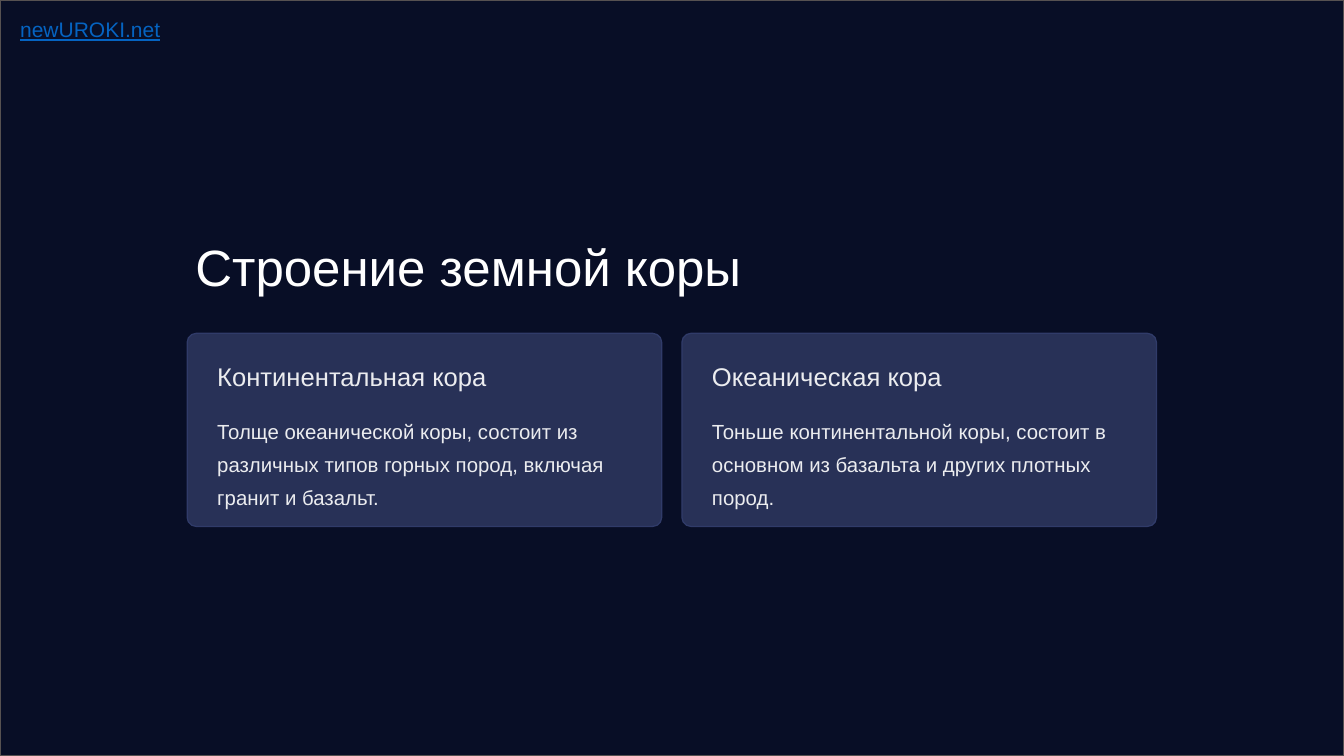
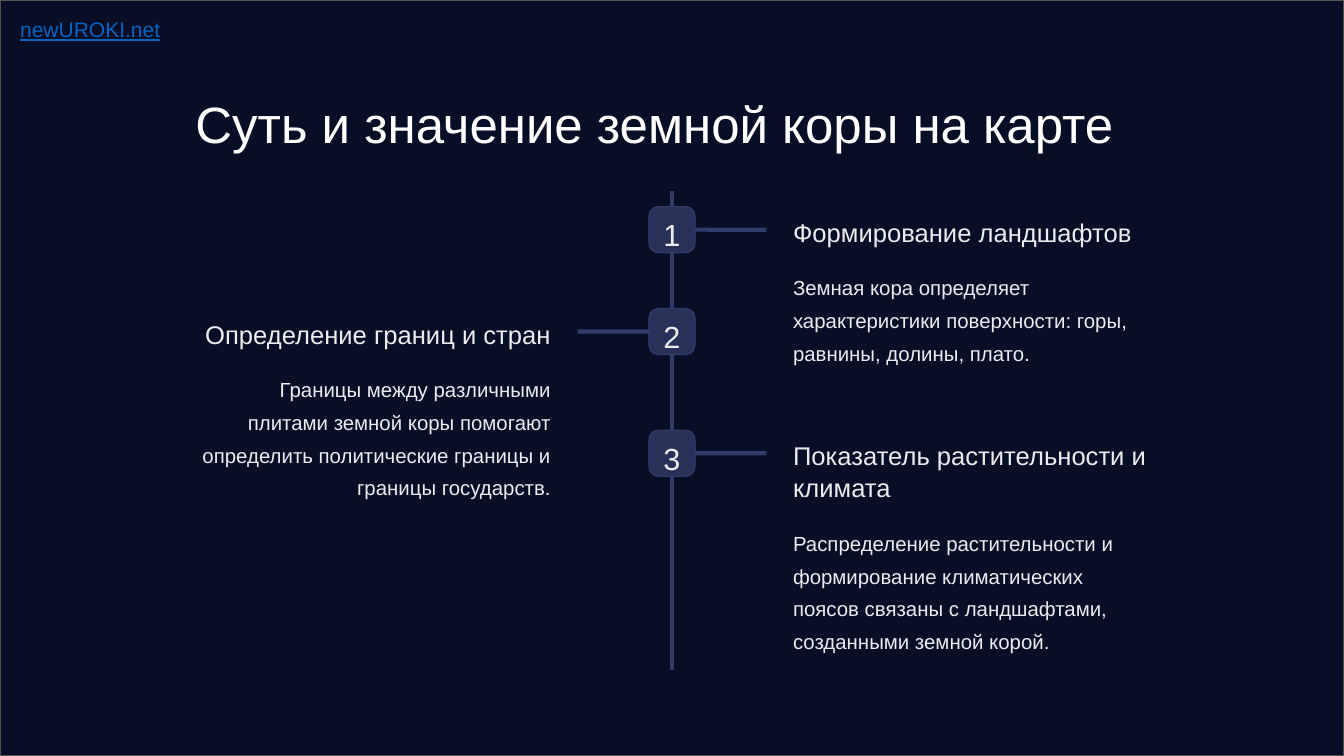
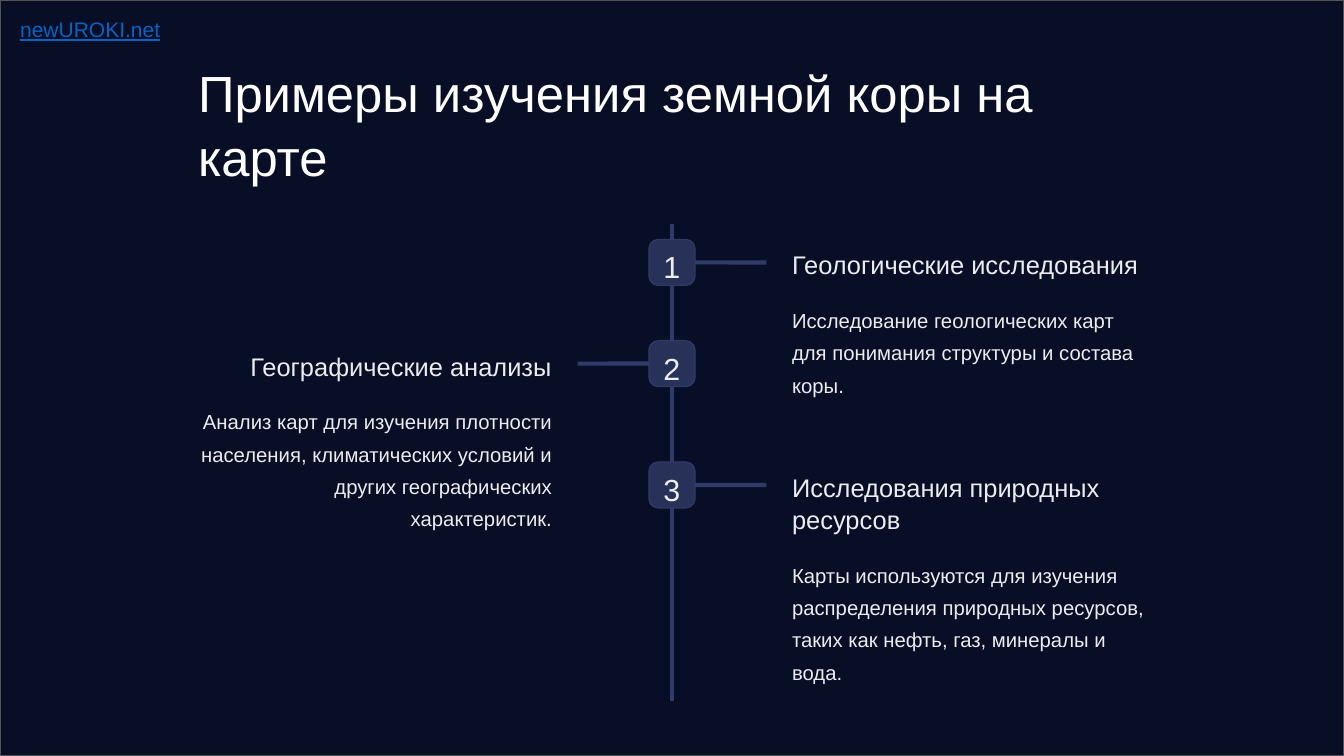
from lxml import etree
from pptx import Presentation
from pptx.dml.color import RGBColor
from pptx.enum.shapes import MSO_CONNECTOR, MSO_SHAPE
from pptx.enum.text import MSO_ANCHOR, PP_ALIGN
from pptx.oxml.ns import qn
from pptx.util import Cm, Pt

RECT, ROUNDED = MSO_SHAPE.RECTANGLE, MSO_SHAPE.ROUNDED_RECTANGLE
STRAIGHT = MSO_CONNECTOR.STRAIGHT
LEFT, CENTER, RIGHT = PP_ALIGN.LEFT, PP_ALIGN.CENTER, PP_ALIGN.RIGHT
TOP = MSO_ANCHOR.TOP
SIDE_LEFT, SIDE_RIGHT = 1, 3

WIDTH, HEIGHT = 40.64, 22.86
FONT = "Arial"
COLORS = {
    "background": "080E26", "frame": "565151", "panel": "283157",
    "line": "303B69", "title": "FFFFFF", "text": "EBECEF", "link": "0563C1",
}
# Role: size in points, line height as a multiple of the size, colour
STYLES = {
    "title": (43.7, 1.25, "title"),
    "heading": (21.9, 1.25, "text"),
    "body": (17.5, 1.6, "text"),
    "number": (26.2, 1.25, "text"),
    "link": (18, None, "link"),
}
TITLE_LINE, HEADING_LINE, BODY_LINE = 1.93, 0.97, 0.98
HEADING_GAP = 0.6


def rgb(name):
    return RGBColor.from_string(COLORS[name])


class Deck:
    """Shared style, the presentation and its current slide."""

    def __init__(self):
        self.prs = Presentation()
        self.prs.slide_width, self.prs.slide_height = Cm(WIDTH), Cm(HEIGHT)

    def new_slide(self, title, top, left=5.66, lines=1, scale=1):
        """Start a slide; scale shrinks its text, left is its side margin."""
        self.slide = self.prs.slides.add_slide(self.prs.slide_layouts[6])
        self.left, self.scale = left, scale
        self.shape(RECT, 0, 0, WIDTH, HEIGHT, "background", "frame")
        self.text("newUROKI.net", "link", 0.36, 0.38, 5.5, 1.02)
        self.text(title, "title", left, top, WIDTH - 2 * left, lines * TITLE_LINE)

    def shape(self, kind, x, y, w, h, fill, line, radius=None):
        sp = self.slide.shapes.add_shape(kind, Cm(x), Cm(y), Cm(w), Cm(h))
        sp.shadow.inherit = False
        sp.fill.solid()
        sp.fill.fore_color.rgb = rgb(fill)
        sp.line.color.rgb = rgb(line)
        sp.line.width = Pt(1.09)
        if radius is not None:
            sp.adjustments[0] = radius
        return sp

    def set_text(self, tf, text, role, align=LEFT):
        size, spacing, color = STYLES[role]
        if role != "link":
            size = round(size * self.scale, 1)
        tf.text = text
        tf.vertical_anchor = TOP
        p = tf.paragraphs[0]
        p.alignment = align
        if spacing:
            p.line_spacing = Pt(round(size * spacing, 1))
        font = p.runs[0].font
        font.name, font.size = FONT, Pt(size)
        font.color.rgb = rgb(color)
        if role == "link":
            font.underline = True

    def text(self, text, role, x, y, w, h, align=LEFT):
        tf = self.slide.shapes.add_textbox(Cm(x), Cm(y), Cm(w), Cm(h)).text_frame
        tf.word_wrap = True
        self.set_text(tf, text, role, align)

    def line(self, x1, y1, x2, y2):
        cn = self.slide.shapes.add_connector(STRAIGHT, Cm(x1), Cm(y1), Cm(x2), Cm(y2))
        cn.line.color.rgb = rgb("line")
        cn.line.width = Pt(3.6)
        etree.SubElement(cn._element.spPr, qn("a:effectLst"))
        return cn

    def entry(self, heading, body, x, y, w, heading_lines, body_lines, align=LEFT):
        """A heading with its explanation below."""
        h = heading_lines * HEADING_LINE
        self.text(heading, "heading", x, y, w, h, align)
        self.text(body, "body", x, y + h + HEADING_GAP, w, body_lines * BODY_LINE, align)

    def cards(self, entries, top):
        w, h, gap, pad = 14.35, 5.84, 0.61, 0.66
        for i, (heading, body) in enumerate(entries):
            x = self.left + i * (w + gap)
            self.shape(ROUNDED, x, top, w, h, "panel", "line", 0.047)
            self.entry(heading, body, x + pad, top + pad, w - 2 * pad, 1, 3)

    def badge(self, number, x, y, size):
        sp = self.shape(ROUNDED, x, y, size, size, "panel", "line", 0.2)
        tf = sp.text_frame
        tf.word_wrap = False
        tf.margin_left = tf.margin_right = tf.margin_bottom = 0
        tf.margin_top = Cm(0.15)
        self.set_text(tf, str(number), "number", CENTER)
        return sp

    def timeline(self, entries, top, height, column):
        """Numbered entries, right and left of a vertical axis in turn."""
        axis, size, branch = WIDTH / 2, 1.39, 2.16
        self.line(axis, top, axis, top + height)
        for i, (offset, heading, body, heading_lines, body_lines) in enumerate(entries):
            y = top + offset
            if i % 2:
                direction, side, x, align = -1, SIDE_LEFT, self.left, RIGHT
            else:
                direction, side, align = 1, SIDE_RIGHT, LEFT
                x = WIDTH - self.left - column
            badge = self.badge(i + 1, axis - size / 2, y, size)
            start, middle = axis + direction * size / 2, y + size / 2
            cn = self.line(start, middle, start + direction * branch, middle)
            cn.begin_connect(badge, side)
            self.entry(heading, body, x, y + 0.14, column,
                       heading_lines, body_lines, align)


def main():
    deck = Deck()

    deck.new_slide("Строение земной коры", top=6.91)
    deck.cards([
        ("Континентальная кора",
         "Толще океанической коры, состоит из различных типов горных пород, "
         "включая гранит и базальт."),
        ("Океаническая кора",
         "Тоньше континентальной коры, состоит в основном из базальта и других "
         "плотных пород."),
    ], top=10.08)

    deck.new_slide("Суть и значение земной коры на карте", top=2.59)
    deck.timeline([
        (0.48, "Формирование ландшафтов",
         "Земная кора определяет характеристики поверхности: горы, равнины, "
         "долины, плато.", 1, 3),
        (3.56, "Определение границ и стран",
         "Границы между различными плитами земной коры помогают определить "
         "политические границы и границы государств.", 1, 4),
        (7.24, "Показатель растительности и климата",
         "Распределение растительности и формирование климатических поясов "
         "связаны с ландшафтами, созданными земной корой.", 2, 4),
    ], top=5.77, height=14.5, column=11.25)

    deck.new_slide("Примеры изучения земной коры на карте", top=1.68,
                   left=5.74, lines=2, scale=0.995)
    deck.timeline([
        (0.48, "Геологические исследования",
         "Исследование геологических карт для понимания структуры и состава "
         "коры.", 1, 3),
        (3.54, "Географические анализы",
         "Анализ карт для изучения плотности населения, климатических условий "
         "и других географических характеристик.", 1, 4),
        (7.21, "Исследования природных ресурсов",
         "Карты используются для изучения распределения природных ресурсов, "
         "таких как нефть, газ, минералы и вода.", 2, 4),
    ], top=6.76, height=14.43, column=11.2)

    deck.prs.save("out.pptx")


if __name__ == "__main__":
    main()
